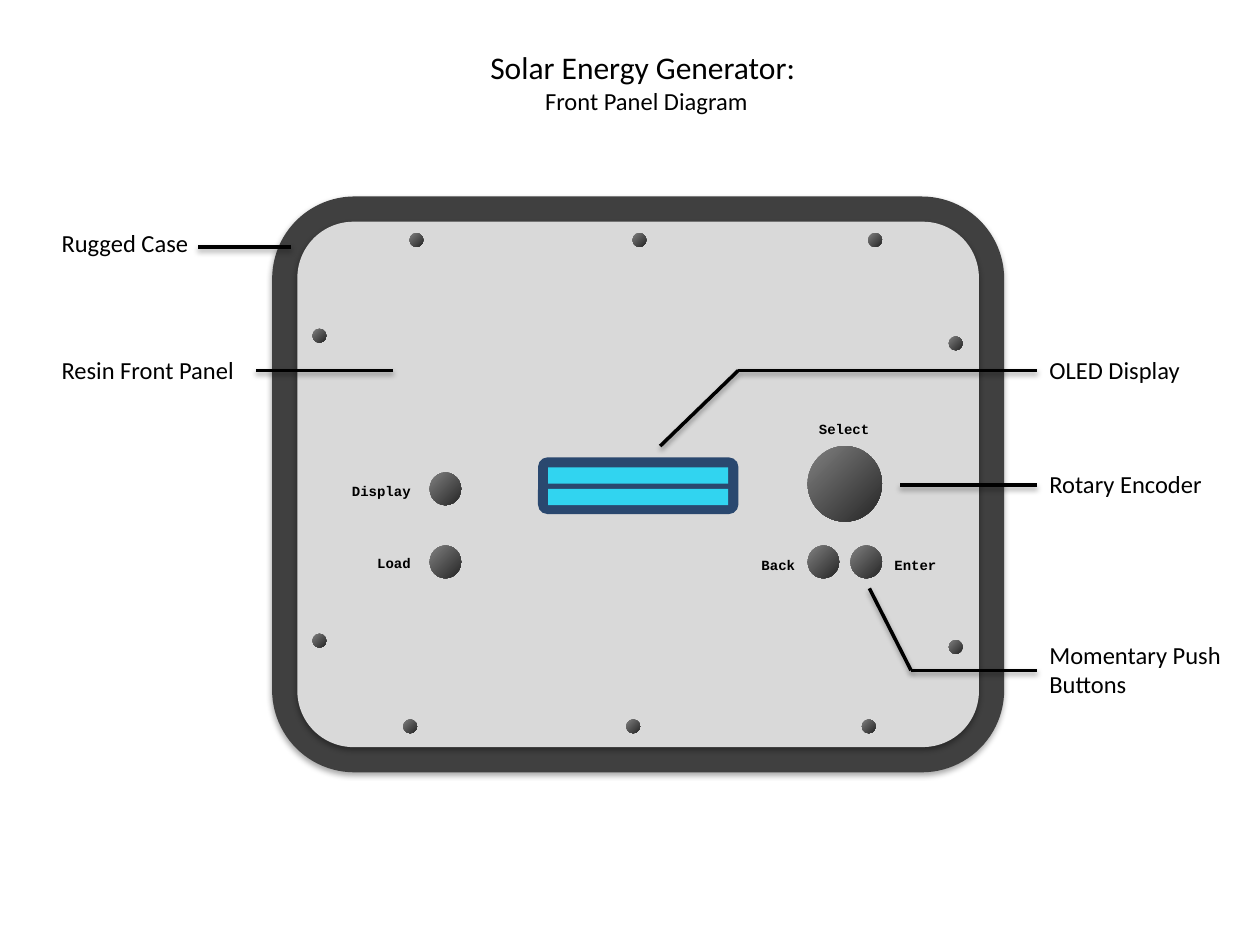
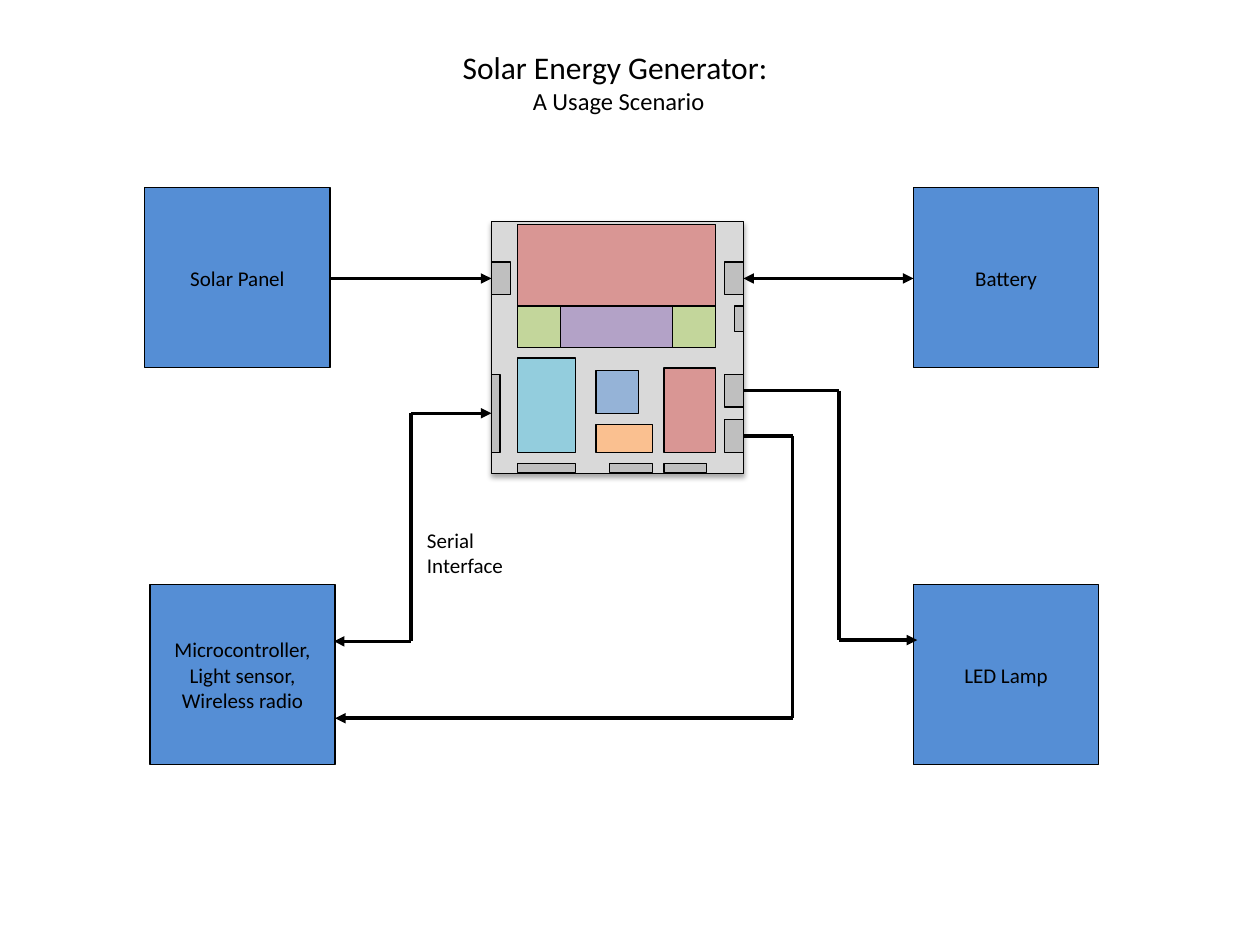
from itertools import pairwise
from lxml.etree import SubElement
from pptx import Presentation
from pptx.dml.color import RGBColor
from pptx.enum.shapes import MSO_CONNECTOR, MSO_SHAPE
from pptx.enum.text import MSO_ANCHOR, MSO_AUTO_SIZE, PP_ALIGN
from pptx.oxml.ns import qn
from pptx.util import Inches, Pt

BLACK = RGBColor(0x00, 0x00, 0x00)
CASE_GREY = RGBColor(0x40, 0x40, 0x40)
PANEL_GREY = RGBColor(0xD9, 0xD9, 0xD9)
PORT_GREY = RGBColor(0xBF, 0xBF, 0xBF)
KNOB_DARK = RGBColor(0x26, 0x26, 0x26)
KNOB_LIGHT = RGBColor(0x80, 0x80, 0x80)
BEZEL_BLUE = RGBColor(0x2A, 0x48, 0x6F)
SCREEN_CYAN = RGBColor(0x31, 0xD4, 0xF0)
DEVICE_BLUE = RGBColor(0x55, 0x8E, 0xD5)
ROSE = RGBColor(0xD9, 0x96, 0x94)
VIOLET = RGBColor(0xB3, 0xA2, 0xC7)
GREEN = RGBColor(0xC3, 0xD6, 0x9B)
BLUE = RGBColor(0x95, 0xB3, 0xD7)
ORANGE = RGBColor(0xFA, 0xC0, 0x90)
AQUA = RGBColor(0x93, 0xCD, 0xDD)


def write(frame, text, sizes=(14,), font="Calibri", bold=False,
          align=PP_ALIGN.LEFT, anchor=MSO_ANCHOR.TOP):
    frame.text = text
    frame.word_wrap = True
    frame.auto_size = MSO_AUTO_SIZE.NONE
    frame.vertical_anchor = anchor
    for paragraph, size in zip(frame.paragraphs, sizes):
        paragraph.alignment = align
        paragraph.font.size = Pt(size)
        paragraph.font.name = font
        paragraph.font.bold = bold
        paragraph.font.color.rgb = BLACK


def draw(slide, preset, box, fill, outlined=False, corner=None):
    shape = slide.shapes.add_shape(preset, *map(Inches, box))
    shape.shadow.inherit = False
    shape.fill.solid()
    shape.fill.fore_color.rgb = fill
    if outlined:
        shape.line.color.rgb = BLACK
        shape.line.width = Pt(0.75)
    else:
        shape.line.fill.background()
    if corner:
        shape.adjustments[0] = corner
    return shape


deck = Presentation()
deck.slide_width, deck.slide_height = Inches(10), Inches(7.5)
slides = []
for subtitle, left in (("Front Panel Diagram", 2.51), ("A Usage Scenario", 2.29)):
    slide = deck.slides.add_slide(deck.slide_layouts[5])
    title = slide.shapes.title
    title.left, title.top = Inches(left), Inches(0.33)
    title.width, title.height = Inches(5.24), Inches(0.64)
    write(title.text_frame, "Solar Energy Generator: \n" + subtitle,
          sizes=(18, 14), align=PP_ALIGN.CENTER)
    slides.append(slide)
front_panel, scenario = slides

rounded = MSO_SHAPE.ROUNDED_RECTANGLE
case = draw(front_panel, rounded, (2.16, 1.56, 5.81, 4.57), CASE_GREY, corner=0.143)
panel = draw(front_panel, rounded, (2.36, 1.76, 5.41, 4.17), PANEL_GREY, corner=0.107)
draw(front_panel, rounded, (4.27, 3.63, 1.59, 0.45), BEZEL_BLUE)
for row_top in (3.71, 3.88):
    draw(front_panel, MSO_SHAPE.RECTANGLE, (4.35, row_top, 1.43, 0.13), SCREEN_CYAN)

encoder = [(6.41, 3.54, 0.59, 0.6)]
buttons = [(left, top, 0.25, 0.26) for left, top in
           ((6.75, 4.33), (6.41, 4.33), (3.41, 4.33), (3.41, 3.75))]
screws = [(left, top, 0.11, 0.11) for left, top in
          ((3.25, 1.85), (5.02, 1.85), (6.89, 1.85),
           (3.2, 5.71), (4.97, 5.71), (6.84, 5.71),
           (2.48, 2.61), (2.48, 5.03), (7.53, 2.67), (7.53, 5.08))]
for box in encoder + buttons + screws:
    knob = draw(front_panel, MSO_SHAPE.OVAL, box, KNOB_DARK)
    knob.fill.gradient()
    for stop, color in zip(knob.fill.gradient_stops, (KNOB_DARK, KNOB_LIGHT)):
        stop.color.rgb = color
    gradient = knob._element.spPr.find(qn("a:gradFill"))
    gradient.remove(gradient.find(qn("a:lin")))
    glow = SubElement(gradient, qn("a:path"), path="circle")
    SubElement(glow, qn("a:fillToRect"), l="100000", t="100000")

engraving = {"sizes": (8,), "font": "Courier New", "bold": True}
for slide, text, box, style in (
    (front_panel, "Back", (5.86, 4.37, 0.55, 0.24), engraving | {"align": PP_ALIGN.RIGHT}),
    (front_panel, "Enter", (7, 4.37, 0.63, 0.24), engraving),
    (front_panel, "Select", (6.32, 3.29, 0.76, 0.24), engraving | {"align": PP_ALIGN.CENTER}),
    (front_panel, "Display", (2.62, 3.78, 0.74, 0.24), engraving | {"align": PP_ALIGN.RIGHT}),
    (front_panel, "Load", (2.66, 4.35, 0.7, 0.24), engraving | {"align": PP_ALIGN.RIGHT}),
    (front_panel, "Rugged Case", (0.39, 1.76, 1.63, 0.34), {}),
    (front_panel, "Resin Front Panel", (0.39, 2.77, 1.63, 0.34), {}),
    (front_panel, "OLED Display", (8.23, 2.77, 1.63, 0.34), {}),
    (front_panel, "Rotary Encoder", (8.23, 3.67, 1.63, 0.34), {}),
    (front_panel, "Momentary Push Buttons", (8.23, 5.03, 1.63, 0.57), {}),
    (scenario, "Serial Interface", (3.29, 4.14, 0.82, 0.5), {"sizes": (12,)}),
):
    label = slide.shapes.add_textbox(*map(Inches, box))
    write(label.text_frame, text, **style)

board = draw(scenario, MSO_SHAPE.RECTANGLE, (3.9, 1.76, 2, 2), PANEL_GREY, outlined=True)
ports = [(left, top, 0.15, 0.26) for left, top in
         ((3.9, 2.08), (5.75, 2.08), (5.75, 2.97), (5.75, 3.33))]
ports += [(3.9, 2.97, 0.07, 0.62), (5.83, 2.43, 0.07, 0.2)]
ports += [(left, 3.68, width, 0.07) for left, width in
          ((4.11, 0.46), (4.84, 0.34), (5.27, 0.34))]
modules_on_board = [
    ((4.11, 1.78, 1.57, 0.65), ROSE),
    ((4.45, 2.43, 0.89, 0.33), VIOLET),
    ((4.11, 2.43, 0.34, 0.33), GREEN),
    ((5.34, 2.43, 0.34, 0.33), GREEN),
    ((4.73, 2.94, 0.34, 0.34), BLUE),
    ((5.27, 2.92, 0.41, 0.67), ROSE),
    ((4.73, 3.37, 0.45, 0.22), ORANGE),
    ((4.11, 2.84, 0.46, 0.75), AQUA),
]
for box, color in [(port, PORT_GREY) for port in ports] + modules_on_board:
    draw(scenario, MSO_SHAPE.RECTANGLE, box, color, outlined=True)

for text, left, top in (
    ("Battery", 7.25, 1.49),
    ("Solar Panel", 1.15, 1.49),
    ("LED Lamp", 7.25, 4.64),
    ("Microcontroller, Light sensor, Wireless radio", 1.19, 4.64),
):
    device = draw(scenario, MSO_SHAPE.RECTANGLE, (left, top, 1.47, 1.43),
                  DEVICE_BLUE, outlined=True)
    write(device.text_frame, text, sizes=(12,), align=PP_ALIGN.CENTER,
          anchor=MSO_ANCHOR.MIDDLE)

shadowed = [case, panel, board]
for slide, points, arrow_at_start, arrow_at_end in (
    (front_panel, [(8.23, 2.94), (5.86, 2.94), (5.24, 3.54)], False, False),
    (front_panel, [(8.23, 3.85), (7.14, 3.85)], False, False),
    (front_panel, [(8.23, 5.32), (7.23, 5.32), (6.9, 4.67)], False, False),
    (front_panel, [(3.12, 2.94), (2.03, 2.94)], False, False),
    (front_panel, [(2.31, 1.96), (1.57, 1.96)], False, False),
    (scenario, [(2.62, 2.21), (3.9, 2.21)], False, True),
    (scenario, [(5.9, 2.21), (7.25, 2.21)], True, True),
    (scenario, [(3.9, 3.28), (3.26, 3.28), (3.26, 5.09), (2.65, 5.09)], True, True),
    (scenario, [(5.9, 3.1), (6.66, 3.1), (6.66, 5.08), (7.28, 5.08)], False, True),
    (scenario, [(5.9, 3.46), (6.29, 3.46), (6.29, 5.7), (2.66, 5.7)], False, True),
):
    for start, end in pairwise(points):
        wire = slide.shapes.add_connector(MSO_CONNECTOR.STRAIGHT, *map(Inches, start + end))
        wire.line.color.rgb = BLACK
        wire.line.width = Pt(2)
        outline = wire._element.spPr.find(qn("a:ln"))
        if arrow_at_start and start == points[0]:
            SubElement(outline, qn("a:headEnd"), type="triangle")
        if arrow_at_end and end == points[-1]:
            SubElement(outline, qn("a:tailEnd"), type="triangle")
        SubElement(wire._element.spPr, qn("a:effectLst"))
        if slide is front_panel:
            shadowed.append(wire)

for part in shadowed:
    effects = part._element.spPr.find(qn("a:effectLst"))
    shadow = SubElement(effects, qn("a:outerShdw"), blurRad=str(Pt(3.1)),
                        dist=str(Pt(1.8)), dir="5400000", rotWithShape="0")
    shade = SubElement(shadow, qn("a:srgbClr"), val=str(BLACK))
    SubElement(shade, qn("a:alpha"), val="35000")

deck.save("out.pptx")
